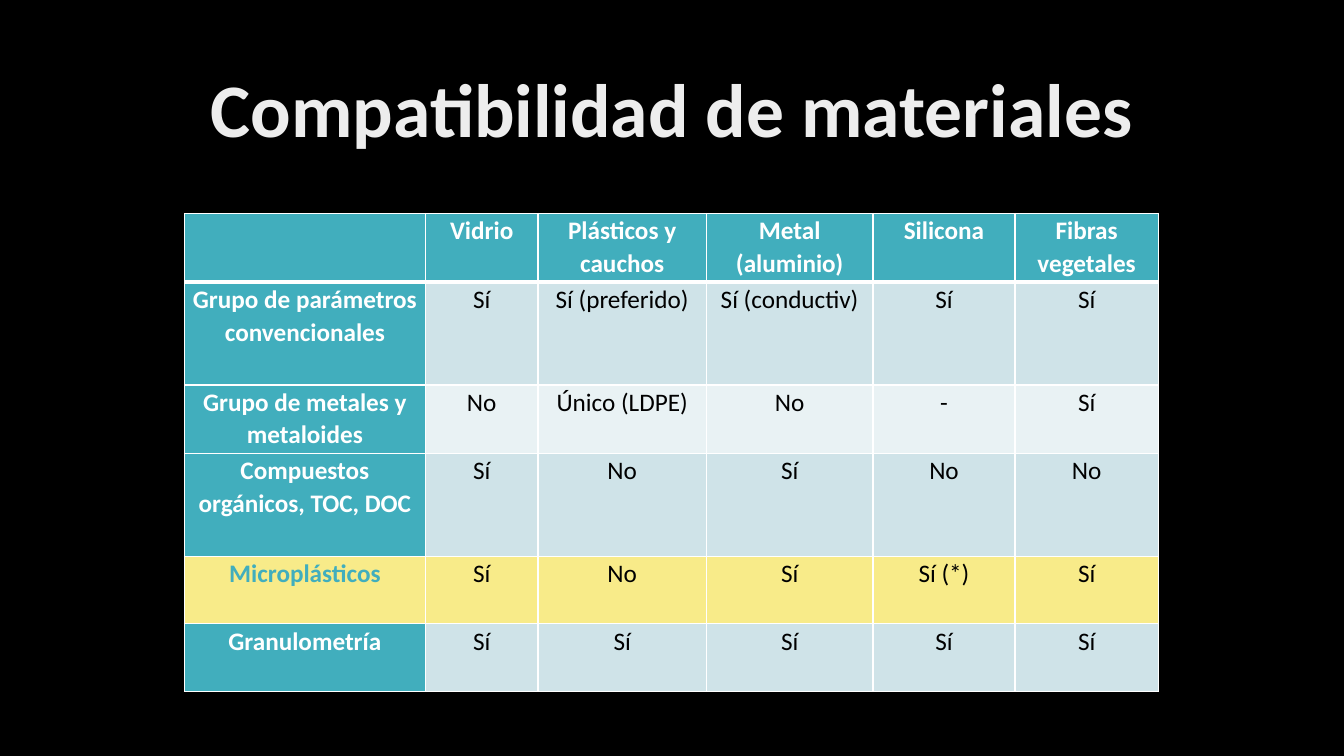
from lxml import etree
from pptx import Presentation
from pptx.dml.color import RGBColor
from pptx.enum.text import MSO_ANCHOR, PP_ALIGN
from pptx.oxml.ns import qn
from pptx.util import Cm, Pt

CENTER = PP_ALIGN.CENTER
MIDDLE = MSO_ANCHOR.MIDDLE
TOP = MSO_ANCHOR.TOP

FONT = "Calibri"
BLACK, WHITE, TITLE_GREY = "000000", "FFFFFF", "EDEDED"
TEAL, BAND_DARK, BAND_LIGHT, YELLOW = "41AEBD", "CFE3E8", "E9F2F4", "F8EB89"

TITLE = "Compatibilidad de materiales"
MATERIALS = ["", "Vidrio", "Plásticos y cauchos", "Metal\n(aluminio)", "Silicona", "Fibras vegetales"]
GROUPS = [
    ["Grupo de parámetros convencionales", "Sí", "Sí (preferido)", "Sí (conductiv)", "Sí", "Sí"],
    ["Grupo de metales y metaloides", "No", "Único (LDPE)", "No", "-", "Sí"],
    ["Compuestos orgánicos, TOC, DOC", "Sí", "No", "Sí", "No", "No"],
    ["Microplásticos", "Sí", "No", "Sí", "Sí (*)", "Sí"],
    ["Granulometría", "Sí", "Sí", "Sí", "Sí", "Sí"],
]
HIGHLIGHTED = "Microplásticos"
COLUMN_WIDTHS = [6.07, 2.84, 4.24, 4.2, 3.58, 3.61]
ROW_HEIGHTS = [1.73, 2.59, 1.73, 2.59, 1.7, 1.7]


def color(value):
    return RGBColor.from_string(value)


def write(frame, text, size, ink, bold, spacing):
    for index, line in enumerate(text.split("\n")):
        para = frame.paragraphs[0] if index == 0 else frame.add_paragraph()
        para.alignment = CENTER
        para.line_spacing = spacing
        span = para.add_run()
        span.text = line
        span.font.name = FONT
        span.font.size = Pt(size)
        span.font.bold = bold
        span.font.color.rgb = color(ink)


def add_border(cell, side, width):
    properties = cell._tc.get_or_add_tcPr()
    line = etree.SubElement(properties, qn("a:ln" + side), w=str(Pt(width)))
    fill = etree.SubElement(line, qn("a:solidFill"))
    etree.SubElement(fill, qn("a:srgbClr"), val=WHITE)


def cell_colors(row, column, group):
    heading = row == 0 or column == 0
    if group == HIGHLIGHTED:
        return YELLOW, TEAL if heading else BLACK
    if heading:
        return TEAL, WHITE
    return BAND_DARK if row % 2 else BAND_LIGHT, BLACK


def add_title(page):
    box = page.shapes.add_textbox(Cm(2.33), Cm(1.01), Cm(29.21), Cm(3.68))
    frame = box.text_frame
    frame.word_wrap = True
    frame.vertical_anchor = MIDDLE
    write(frame, TITLE, 54, TITLE_GREY, True, 0.9)


def add_matrix(page):
    rows = [MATERIALS] + GROUPS
    table = page.shapes.add_table(
        len(rows), len(MATERIALS), Cm(4.65), Cm(5.38),
        Cm(sum(COLUMN_WIDTHS)), Cm(sum(ROW_HEIGHTS)),
    ).table
    for column, width in zip(table.columns, COLUMN_WIDTHS):
        column.width = Cm(width)
    for row, height in zip(table.rows, ROW_HEIGHTS):
        row.height = Cm(height)
    for r, texts in enumerate(rows):
        for c, text in enumerate(texts):
            cell = table.cell(r, c)
            cell.margin_left = cell.margin_right = Cm(0.18)
            cell.margin_top = cell.margin_bottom = 0
            cell.vertical_anchor = TOP
            for side in "LRTB":
                under_header = (r, side) in [(0, "B"), (1, "T")]
                add_border(cell, side, 3 if under_header else 1)
            background, ink = cell_colors(r, c, texts[0])
            cell.fill.solid()
            cell.fill.fore_color.rgb = color(background)
            if text:
                write(cell.text_frame, text, 18, ink, r == 0 or c == 0, 1.07)


def main():
    deck = Presentation()
    deck.slide_width, deck.slide_height = Cm(33.87), Cm(19.05)
    page = deck.slides.add_slide(deck.slide_layouts[6])
    page.background.fill.solid()
    page.background.fill.fore_color.rgb = color(BLACK)
    add_title(page)
    add_matrix(page)
    deck.save("out.pptx")


if __name__ == "__main__":
    main()
